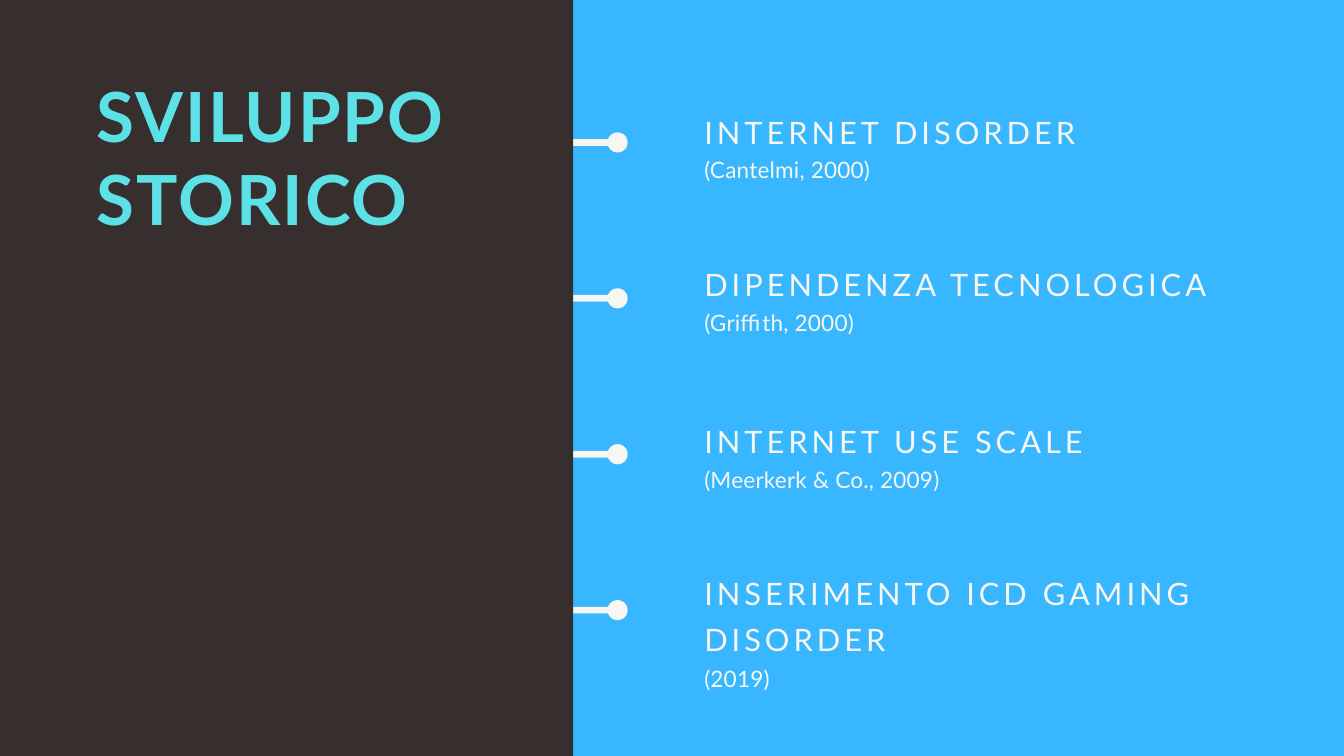
import pptx
import pptx.util
import pptx.dml.color
import pptx.enum.shapes
import pptx.enum.text

PX = 9144
DARK, BLUE, AQUA, PALE = "372E2E", "38B6FF", "5CE1E6", "F5F7F0"
KIND = pptx.enum.shapes.MSO_SHAPE


def paint(fill, hue):
    fill.solid()
    fill.fore_color.rgb = pptx.dml.color.RGBColor.from_string(hue)


def write(text, box, size, lead, track, hue=PALE, bold=False, shape=None):
    shape = shape or slide.shapes.add_textbox(0, 0, 0, 0)
    shape.left, shape.top, shape.width, shape.height = [n * PX for n in box]
    frame = shape.text_frame
    frame.margin_left = frame.margin_right = 0
    frame.margin_top = frame.margin_bottom = 0
    frame.word_wrap = True
    frame.auto_size = pptx.enum.text.MSO_AUTO_SIZE.NONE
    frame.vertical_anchor = pptx.enum.text.MSO_ANCHOR.TOP
    para = frame.paragraphs[0]
    para.alignment = pptx.enum.text.PP_ALIGN.LEFT
    para.line_spacing = pptx.util.Pt(lead)
    run = para.add_run()
    run.text = text
    run.font.name = "Lato"
    run.font.size = pptx.util.Pt(size)
    run.font.bold = bold
    paint(run.font.fill, hue)
    run._r.get_or_add_rPr().set("spc", str(round(track * 100)))


deck = pptx.Presentation()
deck.slide_width, deck.slide_height = 2000 * PX, 1125 * PX
slide = deck.slides.add_slide(deck.slide_layouts[5])
paint(slide.background.fill, BLUE)

rows = [207 + 232 * i for i in range(4)]
bars = [(KIND.RECTANGLE, 841, y, 76, 10, PALE) for y in rows]
panel = [(KIND.RECTANGLE, 0, -8, 853, 1141, DARK)]
dots = [(KIND.OVAL, 904, y - 10, 30, 30, PALE) for y in rows]
for kind, x, y, w, h, hue in bars + panel + dots:
    shape = slide.shapes.add_shape(kind, x * PX, y * PX, w * PX, h * PX)
    shape.shadow.inherit = False
    shape.line.fill.background()
    paint(shape.fill, hue)

title = slide.shapes.title
shape._element.addnext(title._element)
write("SVILUPPO STORICO", (144, 109, 533, 245), 74, 88.8, 2.2,
      hue=AQUA, bold=True, shape=title)

steps = [
    ("INTERNET DISORDER", "(Cantelmi, 2000)", 155, 62),
    ("DIPENDENZA TECNOLOGICA", "(Griffith, 2000)", 382, 62),
    ("INTERNET USE SCALE", "(Meerkerk & Co., 2009)", 615, 62),
    ("INSERIMENTO ICD GAMING DISORDER", "(2019)", 841, 132),
]
for head, cite, top, tall in steps:
    write(head, (1048, top, 839, tall), 33, 49.5, 4.3)
    write(cite, (1048, top + tall + 9, 838, 43), 24.2, 33.9, 0.2)

deck.save("out.pptx")
